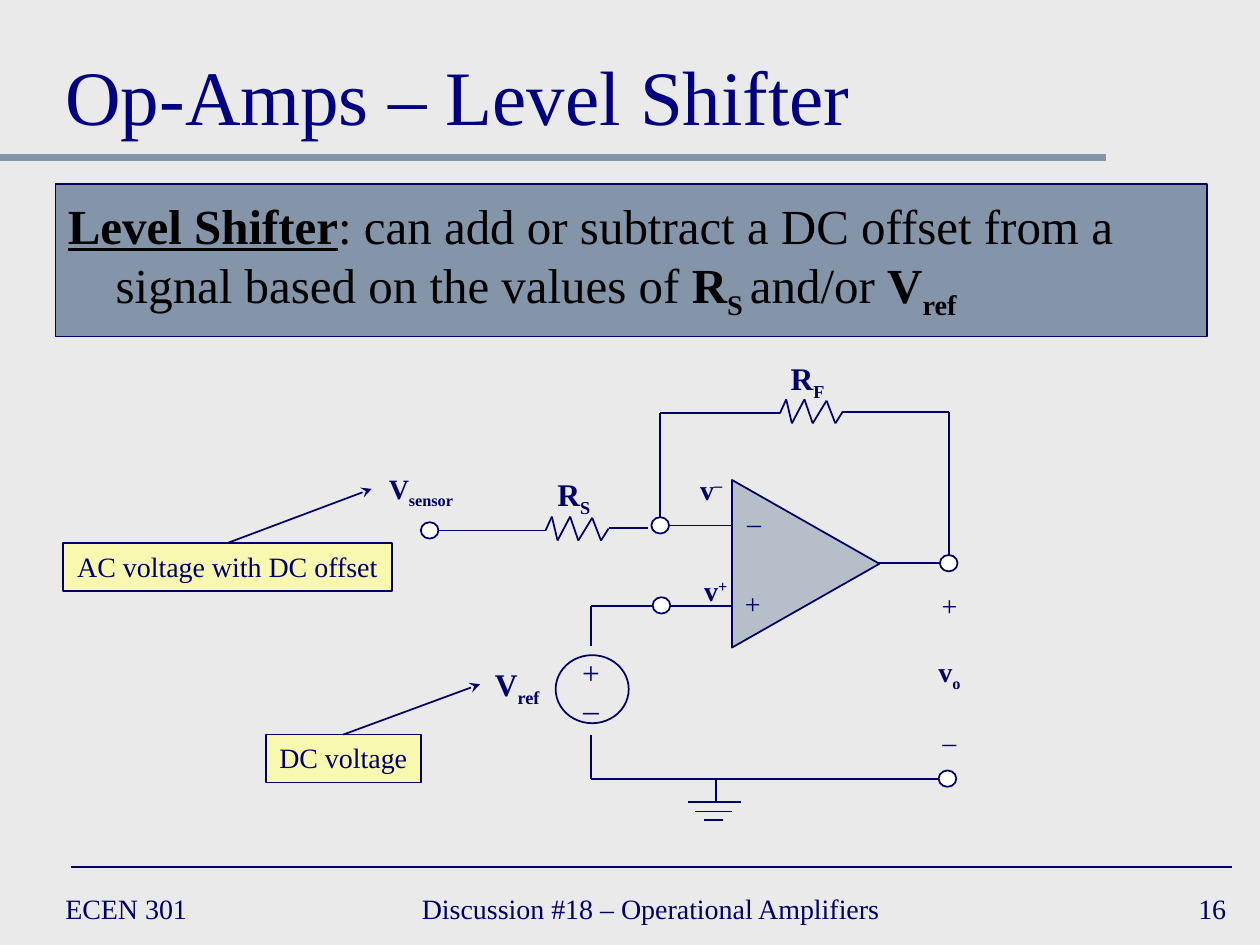
"""Build the level shifter slide: definition, op-amp circuit and two callouts."""
from itertools import pairwise

from lxml import etree
from pptx import Presentation
from pptx import util as u
from pptx.dml.color import RGBColor
from pptx.enum import shapes, text
from pptx.oxml.ns import qn

INK, SLATE, YELLOW, WHITE = "000066", "8495A9", "FFFF99", "FFFFFF"
LEFT, CENTER, RIGHT = text.PP_ALIGN.LEFT, text.PP_ALIGN.CENTER, text.PP_ALIGN.RIGHT
TOP, MIDDLE, BOTTOM = text.MSO_ANCHOR.TOP, text.MSO_ANCHOR.MIDDLE, text.MSO_ANCHOR.BOTTOM
RECT, OVAL = shapes.MSO_SHAPE.RECTANGLE, shapes.MSO_SHAPE.OVAL
BASELINES = {"_": "-25000", "^": "30000"}

deck = Presentation()
deck.slide_width, deck.slide_height = u.Inches(10), u.Inches(7.5)
cell = deck.slide_width / 100
slide = deck.slides.add_slide(deck.slide_layouts[6])
slide.background.fill.solid()
slide.background.fill.fore_color.rgb = RGBColor.from_string("EAEAEA")


def box(at, lines=(), size=16, color=INK, align=CENTER, anchor=TOP, wrap=False,
        kind=None, fill=None, alpha=100, border=1):
    """Place text or a shape; each line is a list of (words, style marks)."""
    place = [round(n * cell) for n in at]
    if kind is None:
        part = slide.shapes.add_textbox(*place)
    else:
        part = slide.shapes.add_shape(kind, *place)
        part.shadow.inherit = False
        part.line.color.rgb = RGBColor.from_string(INK)
        part.line.width = u.Pt(border)
        if fill:
            part.fill.solid()
            part.fill.fore_color.rgb = RGBColor.from_string(fill)
            if alpha < 100:
                tint = part.fill._xPr.find(".//" + qn("a:srgbClr"))
                etree.SubElement(tint, qn("a:alpha"), val=str(alpha * 1000))
        else:
            part.fill.background()
    frame = part.text_frame
    frame.word_wrap, frame.vertical_anchor = wrap, anchor
    for number, line in enumerate(lines):
        paragraph = frame.paragraphs[0] if number == 0 else frame.add_paragraph()
        paragraph.alignment = align
        paragraph.font.name, paragraph.font.size = "Times New Roman", u.Pt(size)
        paragraph.font.color.rgb = RGBColor.from_string(color)
        for words, marks in line:
            run = paragraph.add_run()
            run.text = words
            if "b" in marks:
                run.font.bold = True
            if "u" in marks:
                run.font.underline = True
            for mark in set(marks) & set(BASELINES):
                run._r.get_or_add_rPr().set("baseline", BASELINES[mark])
    return part


def wire(*points, color=INK, width=1, arrow=False):
    """Join the points with straight lines."""
    for start, end in pairwise(points):
        line = slide.shapes.add_connector(
            shapes.MSO_CONNECTOR.STRAIGHT, *[round(n * cell) for n in start + end])
        line.line.color.rgb = RGBColor.from_string(color)
        line.line.width = u.Pt(width)
        if arrow:
            etree.SubElement(line.line._get_or_add_ln(), qn("a:tailEnd"), type="stealth")
        etree.SubElement(line._element.spPr, qn("a:effectLst"))


wire((0, 12.5), (87.8, 12.5), color=SLATE, width=4)
wire((5.6, 68.8), (97.8, 68.8))
for left, width, words, align in [
    (4.2, 21.7, "ECEN 301", LEFT),
    (32.5, 38.3, "Discussion #18 – Operational Amplifiers", LEFT),
    (77.5, 20.8, "16", RIGHT),
]:
    box((left, 70, width, 4.2), [[(words, "")]], align=align, anchor=MIDDLE, wrap=True)

box((4.2, 1.7, 91.7, 10), [[("Op-Amps – Level Shifter", "")]], size=44,
    color="000080", align=LEFT, anchor=BOTTOM, wrap=True)
definition = box(
    (4.4, 14.6, 91.4, 12.1),
    [[("Level Shifter", "bu"),
      (": can add or subtract a DC offset from a signal based on the values of ", ""),
      ("R", "b"), ("S ", "b_"), ("and/or ", ""), ("V", "b"), ("ref", "b_")]],
    size=28, color="000000", align=LEFT, wrap=True, kind=RECT, fill=SLATE, border=0.75)
definition.text_frame.margin_top = u.Inches(0.09)
hanging = definition.text_frame.paragraphs[0]._p.get_or_add_pPr()
hanging.set("marL", str(u.Inches(0.38)))
hanging.set("indent", str(-u.Inches(0.38)))

amplifier = box((57.3, 38.9, 13.3, 11.7), kind=shapes.MSO_SHAPE.ISOSCELES_TRIANGLE,
                fill=SLATE, alpha=50)
amplifier.rotation = 90

zigzag = [(0, 0), (0.5, -1.1), (0.95, 0.8), (1.95, -1.1),
          (2.6, 0.8), (3.7, -1), (4.4, 0.8), (5, -0.15)]
for left, top in [(61.9, 32.8), (43.3, 42.1)]:
    wire(*[(left + dx, top + dy) for dx, dy in zigzag])

wire((52.4, 41.7), (52.4, 32.8), (61.9, 32.8))
wire((66.9, 32.7), (75.3, 32.7), (75.3, 44.7))
wire((34.1, 42.1), (43.3, 42.1))
wire((48.3, 41.9), (51.4, 41.9))
wire((52.4, 41.7), (58.2, 41.7))
wire((46.9, 51.3), (46.9, 48.1), (58.2, 48.1))
wire((69.7, 44.7), (75.3, 44.7))
wire((46.9, 58.3), (46.9, 61.8), (75.2, 61.8))
wire((56.8, 61.8), (56.8, 63.6))
for left, right, level in [(54.6, 58.8, 63.65), (55.2, 58.1, 64.4), (55.9, 57.4, 65.1)]:
    wire((left, level), (right, level))

for x, y in [(52.4, 41.7), (52.5, 48.05), (75.3, 44.7), (75.2, 61.8), (34.1, 42.1)]:
    box((x - 0.7, y - 0.65, 1.4, 1.3), kind=OVAL, fill=WHITE)
box((44.1, 52, 5.8, 5.4), kind=OVAL)

for at, size, lines in [
    ((58.3, 39.6, 3.1, 3.7), 16, [[("–", "")]]),
    ((58.1, 46.1, 3.3, 3.7), 16, [[("+", "")]]),
    ((45.2, 51.3, 3.4, 7), 18, [[("+", "")], [("–", "")]]),
    ((61.7, 28, 4.8, 4), 18, [[("R", "b"), ("F", "b_")]]),
    ((43.2, 37.2, 4.7, 4), 18, [[("R", "b"), ("S", "b_")]]),
    ((38.1, 52.3, 5.9, 4), 18, [[("V", "b"), ("ref", "b_")]]),
    ((29.5, 36.9, 7.8, 3.7), 16, [[("V", "b"), ("sensor", "b_")]]),
    ((54.8, 45, 4, 3.7), 16, [[("v", "b"), ("+", "b^")]]),
    ((54.5, 37, 3.9, 3.7), 16, [[("v", "b"), ("–", "b^")]]),
]:
    box(at, lines, size)

output = box((73.4, 46.2, 3.9, 14.4), [[("+", "")], [("v", "b"), ("o", "b_")], [("–", "")]])
for paragraph in output.text_frame.paragraphs[1:]:
    paragraph.space_before = u.Pt(18.4)

for at, words, tip in [
    ((5, 43.1, 26.1, 3.8), "AC voltage with DC offset", (29.5, 38.8)),
    ((21.1, 58.3, 12.3, 3.8), "DC voltage", (38.1, 54.3)),
]:
    box(at, [[(words, "")]], kind=RECT, fill=YELLOW, alpha=70)
    wire((at[0] + at[2] / 2, at[1]), tip, arrow=True)

deck.save("out.pptx")
